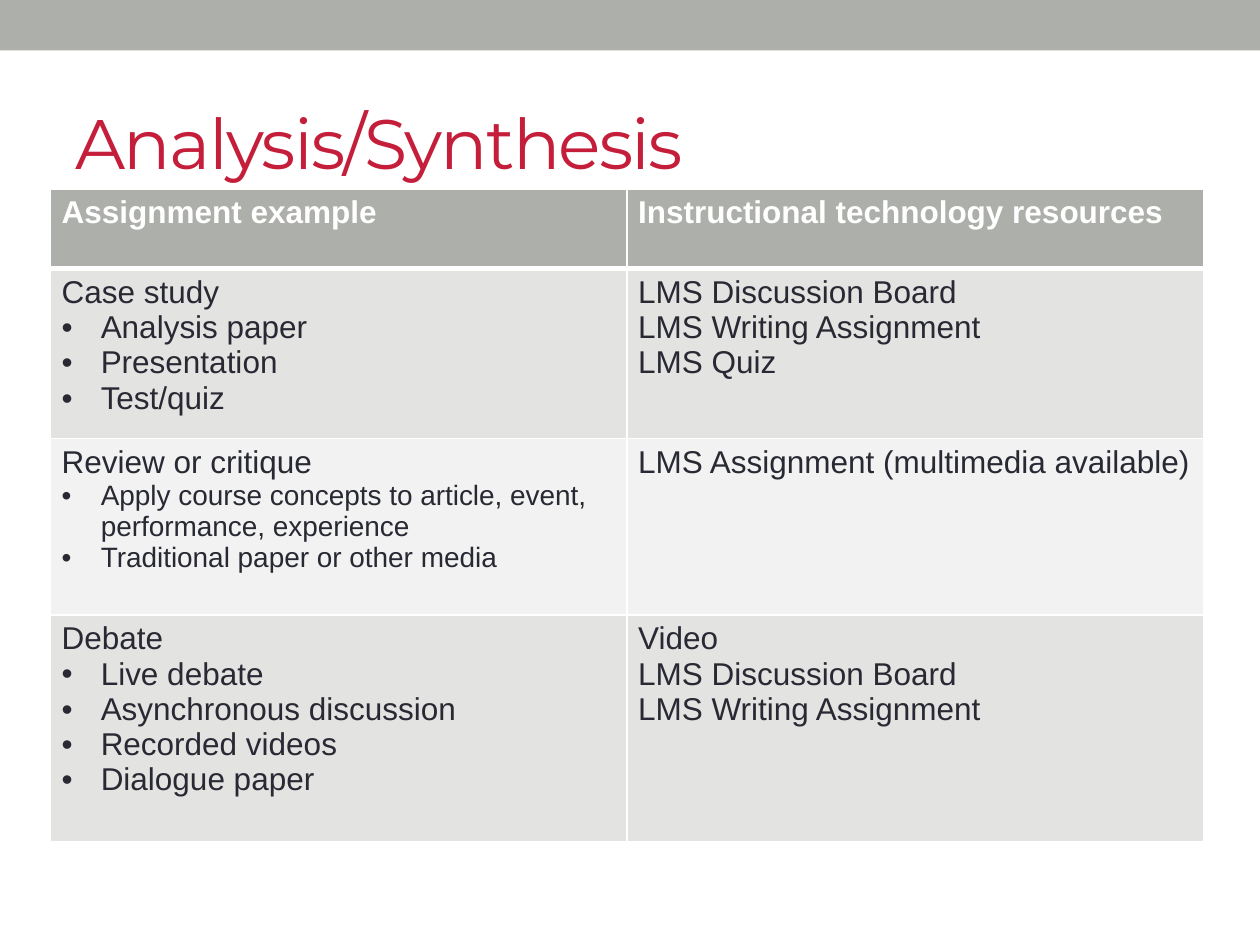
import pptx
import pptx.dml.color
import pptx.enum.shapes
import pptx.enum.text
import pptx.oxml.ns
import pptx.util
from dataclasses import dataclass
from lxml import etree


@dataclass(frozen=True)
class Theme:
    gray: str = "ADAFAA"
    red: str = "C41E3A"
    ink: str = "292934"
    white: str = "FFFFFF"
    bands: tuple = ("E3E3E2", "F1F2F1")
    title_font: str = "Montserrat"
    body_font: str = "Arial"
    title_size: int = 40
    body_size: int = 18
    small_size: int = 16


THEME = Theme()
WIDTH, HEIGHT = 10, 7.5

# Content: each cell is (plain lines, bulleted lines, bullet size)
TITLE = "Analysis/Synthesis"
HEADERS = ["Assignment example", "Instructional technology resources"]
BODY = THEME.body_size
ROWS = [
    [(["Case study"], ["Analysis paper", "Presentation", "Test/quiz"], BODY),
     (["LMS Discussion Board", "LMS Writing Assignment", "LMS Quiz"], [], BODY)],
    [(["Review or critique"],
      ["Apply course concepts to article, event, performance, experience",
       "Traditional paper or other media"], THEME.small_size),
     (["LMS Assignment (multimedia available)"], [], BODY)],
    [(["Debate"],
      ["Live debate", "Asynchronous discussion", "Recorded videos", "Dialogue paper"], BODY),
     (["Video", "LMS Discussion Board", "LMS Writing Assignment"], [], BODY)],
]
ROW_HEIGHTS = [0.63, 1.35, 1.4, 1.8]
TABLE_LEFT, TABLE_TOP, TABLE_WIDTH = 0.4, 1.5, 9.15
BULLET_INDENT = 0.31


def inches(*values):
    return [pptx.util.Inches(value) for value in values]


def rgb(code):
    return pptx.dml.color.RGBColor.from_string(code)


def paint(target, color):
    target.fill.solid()
    target.fill.fore_color.rgb = rgb(color)


def style(para, font, size, color, bold=False):
    para.font.name = font
    para.font.size = pptx.util.Pt(size)
    para.font.color.rgb = rgb(color)
    para.font.bold = bold


def add_child(parent, tag, **attributes):
    return etree.SubElement(parent, pptx.oxml.ns.qn(tag), attributes)


def add_bullet(para):
    properties = para._p.get_or_add_pPr()
    indent = pptx.util.Inches(BULLET_INDENT)
    properties.set("marL", str(indent))
    properties.set("indent", str(-indent))
    bullet_font = etree.Element(pptx.oxml.ns.qn("a:buFont"), typeface=THEME.body_font)
    bullet = etree.Element(pptx.oxml.ns.qn("a:buChar"), char="•")
    properties.insert(0, bullet_font)
    properties.insert(1, bullet)


def add_borders(cell, bottom):
    properties = cell._tc.get_or_add_tcPr()
    widths = {"a:lnL": 1, "a:lnR": 1, "a:lnT": 1, "a:lnB": bottom}
    for tag, width in widths.items():
        line = add_child(properties, tag, w=str(pptx.util.Pt(width)))
        add_child(add_child(line, "a:solidFill"), "a:srgbClr", val=THEME.white)


def fill_cell(cell, lines, color, fill, bold=False, bottom=1):
    cell.margin_left = cell.margin_right = pptx.util.Inches(0.09)
    cell.margin_top = cell.margin_bottom = pptx.util.Inches(0.05)
    cell.vertical_anchor = pptx.enum.text.MSO_ANCHOR.TOP
    frame = cell.text_frame
    for index, (text, size, bulleted) in enumerate(lines):
        para = frame.add_paragraph() if index else frame.paragraphs[0]
        para.text = text
        style(para, THEME.body_font, size, color, bold)
        if bulleted:
            add_bullet(para)
    add_borders(cell, bottom)
    paint(cell, fill)


def main():
    deck = pptx.Presentation()
    deck.slide_width, deck.slide_height = inches(WIDTH, HEIGHT)
    page = deck.slides.add_slide(deck.slide_layouts[5])

    # Top band
    band = page.shapes.add_shape(
        pptx.enum.shapes.MSO_SHAPE.RECTANGLE, *inches(0, 0, WIDTH, 0.4))
    band.shadow.inherit = False
    paint(band, THEME.gray)
    band.line.fill.background()

    # Title
    title = page.shapes.title
    title.left, title.top, title.width, title.height = inches(0.5, 0.58, 9, 1.08)
    title.text_frame.vertical_anchor = pptx.enum.text.MSO_ANCHOR.MIDDLE
    para = title.text_frame.paragraphs[0]
    para.text = TITLE
    para.alignment = pptx.enum.text.PP_ALIGN.LEFT
    style(para, THEME.title_font, THEME.title_size, THEME.red)
    para.runs[0]._r.get_or_add_rPr().set("spc", "-100")

    # Table
    table = page.shapes.add_table(
        len(ROW_HEIGHTS), len(HEADERS),
        *inches(TABLE_LEFT, TABLE_TOP, TABLE_WIDTH, sum(ROW_HEIGHTS))).table
    for row, height in zip(table.rows, ROW_HEIGHTS):
        row.height = pptx.util.Inches(height)
    for column, text in enumerate(HEADERS):
        fill_cell(table.cell(0, column), [(text, BODY, False)],
                  THEME.white, THEME.gray, bold=True, bottom=3)
    for number, row in enumerate(ROWS):
        fill = THEME.bands[number % len(THEME.bands)]
        for column, (plain, bullets, size) in enumerate(row):
            lines = [(text, BODY, False) for text in plain]
            lines += [(text, size, True) for text in bullets]
            fill_cell(table.cell(number + 1, column), lines, THEME.ink, fill)

    deck.save("out.pptx")


if __name__ == "__main__":
    main()
